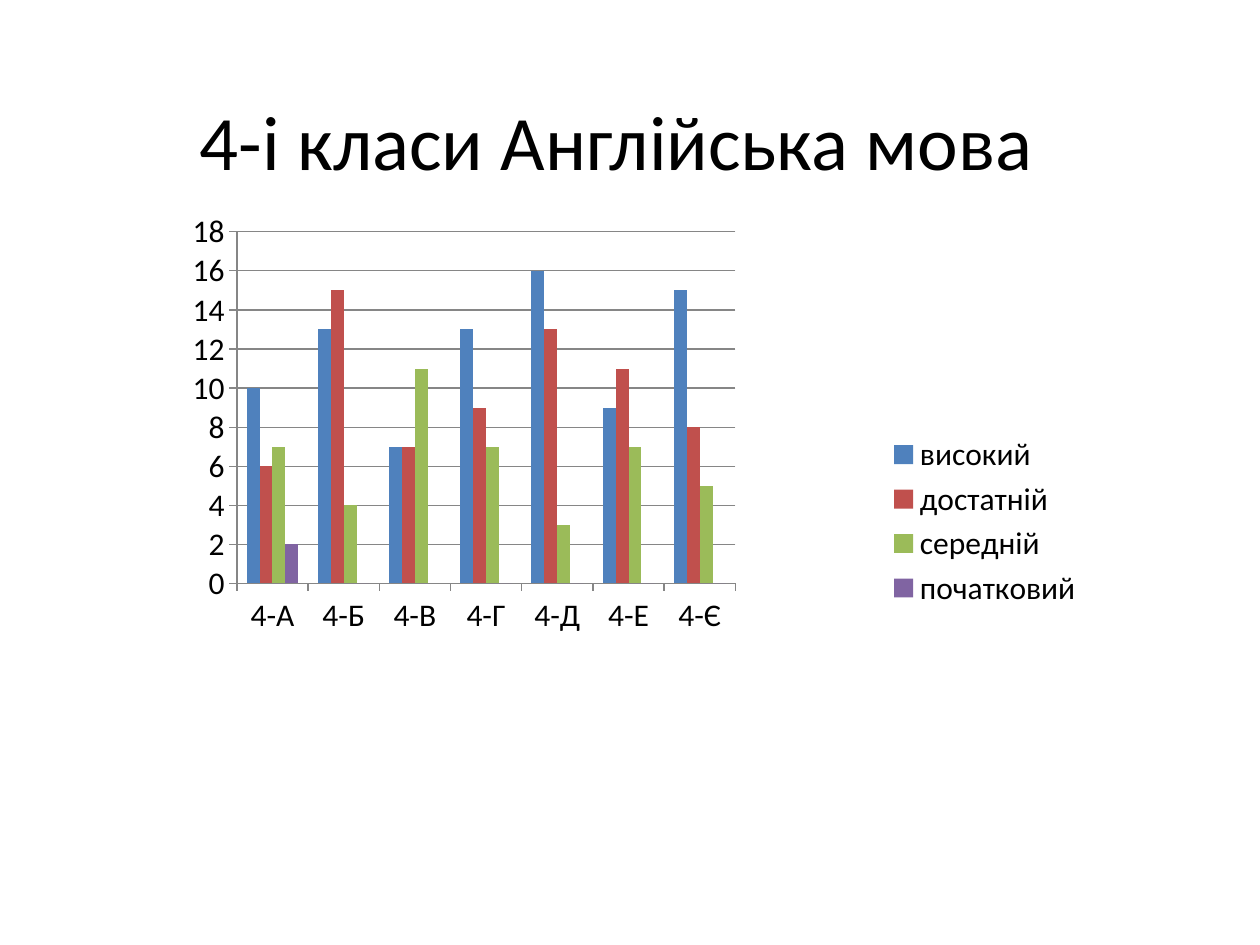
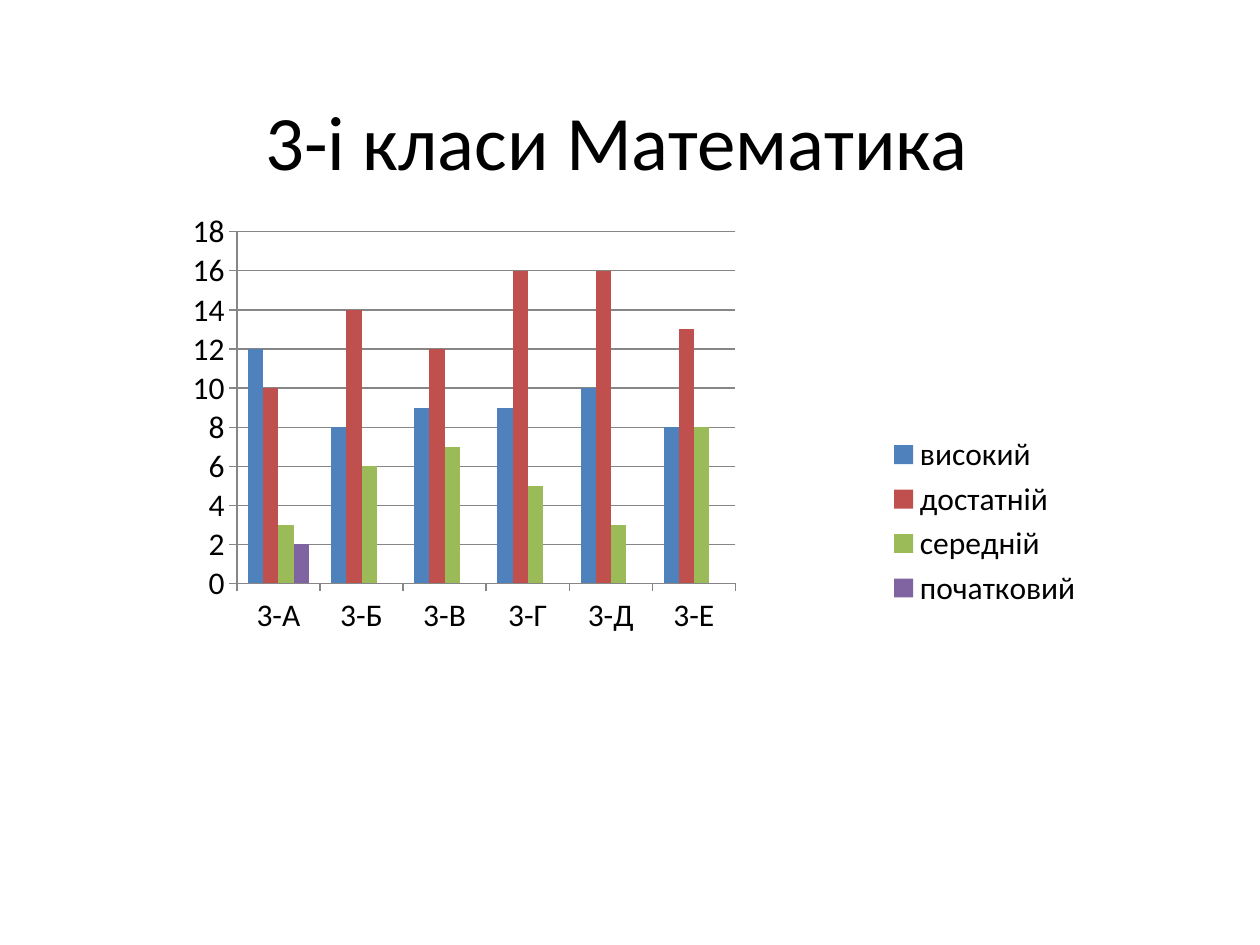
from dataclasses import dataclass

from lxml.etree import SubElement
from pptx import Presentation
from pptx.chart.chart import Chart
from pptx.chart.data import CategoryChartData
from pptx.dml.color import RGBColor
from pptx.enum.chart import XL_CHART_TYPE, XL_LEGEND_POSITION, XL_TICK_MARK
from pptx.enum.text import MSO_ANCHOR, PP_ALIGN
from pptx.oxml.ns import qn
from pptx.slide import Slide
from pptx.util import Cm, Pt


@dataclass(frozen=True)
class Theme:
    font: str = "Calibri"
    title_size: Pt = Pt(44)
    chart_size: Pt = Pt(18)
    line_width: Pt = Pt(0.75)
    text: RGBColor = RGBColor.from_string("000000")
    background: RGBColor = RGBColor.from_string("FFFFFF")
    axis: RGBColor = RGBColor.from_string("868686")
    levels: tuple[RGBColor, ...] = tuple(
        RGBColor.from_string(code) for code in ("4F81BD", "C0504D", "9BBB59", "8064A2")
    )


@dataclass(frozen=True)
class Box:
    left: Cm
    top: Cm
    width: Cm
    height: Cm

    def place(self) -> tuple[Cm, Cm, Cm, Cm]:
        return self.left, self.top, self.width, self.height


@dataclass(frozen=True)
class GradeReport:
    title: str
    classes: tuple[str, ...]
    pupils_by_level: tuple[tuple[int | None, ...], ...]


THEME = Theme()
TITLE_BOX = Box(Cm(1.9), Cm(1.32), Cm(21.42), Cm(3))
CHART_BOX = Box(Cm(2.7), Cm(4.11), Cm(19.4), Cm(12.8))
PLOT_SHARES = {"x": 0.107, "y": 0.044, "w": 0.518, "h": 0.554}
LEVELS = ("високий", "достатній", "середній", "початковий")

REPORTS = (
    GradeReport(
        "4-і класи Англійська мова ",
        ("4-А", "4-Б", "4-В", "4-Г", "4-Д", "4-Е", "4-Є"),
        (
            (10, 13, 7, 13, 16, 9, 15),
            (6, 15, 7, 9, 13, 11, 8),
            (7, 4, 11, 7, 3, 7, 5),
            (2, 0, None, 0, 0, 0, 0),
        ),
    ),
    GradeReport(
        "3-і класи Математика ",
        ("3-А", "3-Б", "3-В", "3-Г", "3-Д", "3-Е"),
        (
            (12, 8, 9, 9, 10, 8),
            (10, 14, 12, 16, 16, 13),
            (3, 6, 7, 5, 3, 8),
            (2, 0, 0, 0, 0, 0),
        ),
    ),
)


def add_title(slide: Slide, title: str) -> None:
    frame = slide.shapes.add_textbox(*TITLE_BOX.place()).text_frame
    frame.word_wrap = True
    frame.vertical_anchor = MSO_ANCHOR.MIDDLE
    heading = frame.paragraphs[0]
    heading.text = title
    heading.alignment = PP_ALIGN.CENTER
    heading.font.name = THEME.font
    heading.font.size = THEME.title_size
    heading.font.color.rgb = THEME.text


def fix_plot_area(chart: Chart) -> None:
    plot_area = chart._chartSpace.chart.plotArea
    layout = plot_area.find(qn("c:layout"))
    if layout is not None:
        plot_area.remove(layout)
    layout = SubElement(plot_area, qn("c:layout"))
    plot_area.insert(0, layout)
    manual = SubElement(layout, qn("c:manualLayout"))
    settings = {"layoutTarget": "inner", "xMode": "edge", "yMode": "edge", **PLOT_SHARES}
    for tag, value in settings.items():
        SubElement(manual, qn(f"c:{tag}")).set("val", str(value))


def style_axes(chart: Chart) -> None:
    pupils_axis = chart.value_axis
    pupils_axis.minimum_scale = 0
    pupils_axis.maximum_scale = 18
    pupils_axis.major_unit = 2
    pupils_axis.has_major_gridlines = True
    for axis in (chart.category_axis, pupils_axis):
        axis.major_tick_mark = XL_TICK_MARK.OUTSIDE
        axis.minor_tick_mark = XL_TICK_MARK.NONE
    for part in (chart.category_axis, pupils_axis, pupils_axis.major_gridlines):
        part.format.line.color.rgb = THEME.axis
        part.format.line.width = THEME.line_width


def add_level_chart(slide: Slide, report: GradeReport) -> None:
    grades = CategoryChartData()
    grades.categories = report.classes
    for level, pupils in zip(LEVELS, report.pupils_by_level):
        grades.add_series(level, pupils)
    chart = slide.shapes.add_chart(
        XL_CHART_TYPE.COLUMN_CLUSTERED, *CHART_BOX.place(), grades
    ).chart
    chart.has_title = False
    chart.font.name = THEME.font
    chart.font.size = THEME.chart_size
    chart.font.color.rgb = THEME.text
    chart.has_legend = True
    chart.legend.position = XL_LEGEND_POSITION.RIGHT
    chart.legend.include_in_layout = False
    columns = chart.plots[0]
    columns.gap_width = 150
    columns.overlap = 0
    columns.vary_by_categories = False
    for level, color in zip(columns.series, THEME.levels):
        level.format.fill.solid()
        level.format.fill.fore_color.rgb = color
        level.invert_if_negative = False
    style_axes(chart)
    fix_plot_area(chart)


def main() -> None:
    presentation = Presentation()
    presentation.slide_width = Cm(25.4)
    presentation.slide_height = Cm(19.05)
    blank = presentation.slide_layouts[6]
    for report in REPORTS:
        slide = presentation.slides.add_slide(blank)
        slide.background.fill.solid()
        slide.background.fill.fore_color.rgb = THEME.background
        add_title(slide, report.title)
        add_level_chart(slide, report)
    presentation.save("out.pptx")


if __name__ == "__main__":
    main()
